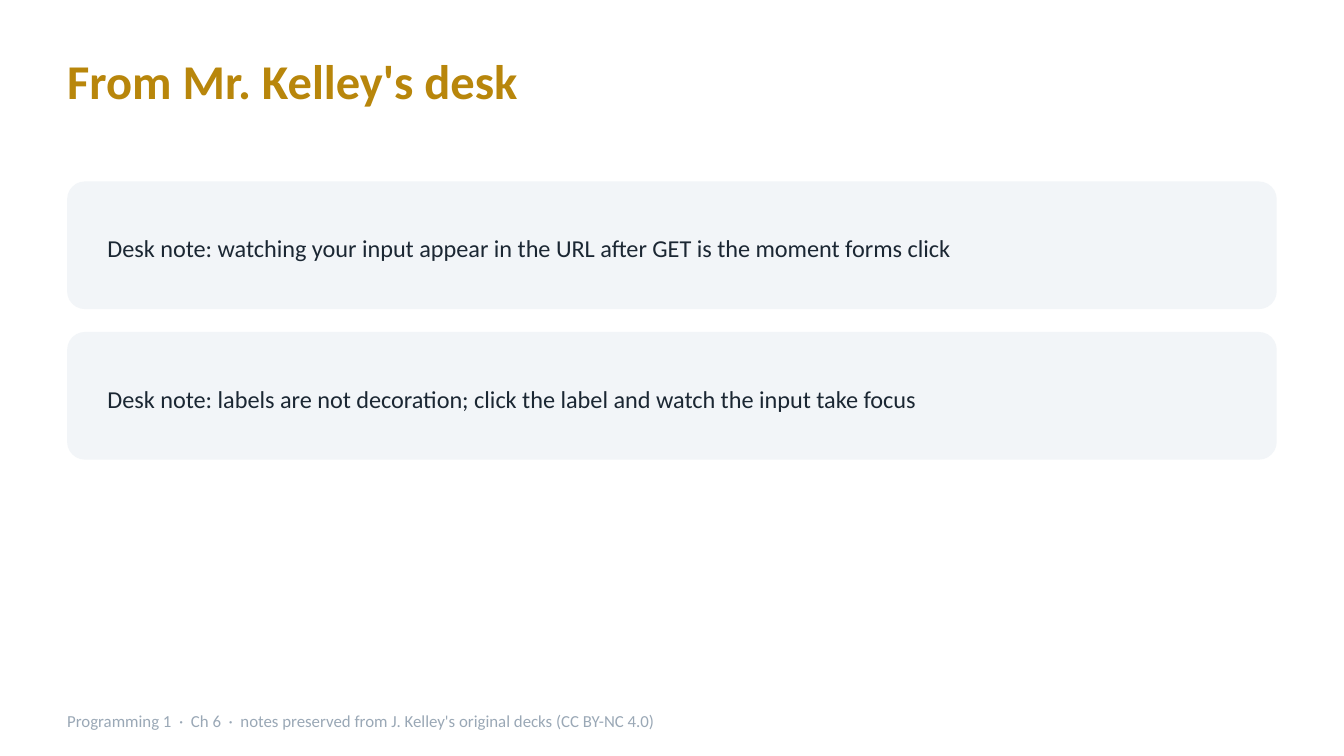
from pptx import Presentation
from pptx.dml.color import RGBColor
from pptx.enum.shapes import MSO_SHAPE as Shape
from pptx.enum.text import MSO_ANCHOR as Anchor, MSO_AUTO_SIZE as AutoSize
from pptx.util import Inches, Pt

COLORS = {"title": "B8860B", "card": "F2F5F8", "body": "1B2733", "footer": "9AA8B6"}
FONT = "Calibri"
SLIDE_WIDTH = 10
SLIDE_HEIGHT = SLIDE_WIDTH * 9 / 16
MARGIN = 0.5
CARD_TOP, CARD_WIDTH, CARD_HEIGHT, CARD_STEP = 1.35, 9, 0.95, 1.12
NOTES = [
    "Desk note: watching your input appear in the URL after GET is the moment forms click",
    "Desk note: labels are not decoration; click the label and watch the input take focus",
]


def set_attributes(target, values):
    for name, value in values.items():
        setattr(target, name, value)


def add_text(slide, text, box, size, color, bold=False, anchor=Anchor.TOP):
    shape = slide.shapes.add_textbox(*map(Inches, box))
    frame = shape.text_frame
    set_attributes(frame, {
        "margin_left": 0, "margin_top": 0, "margin_right": 0, "margin_bottom": 0,
        "word_wrap": True, "auto_size": AutoSize.SHAPE_TO_FIT_TEXT,
        "vertical_anchor": anchor,
    })
    paragraph = frame.paragraphs[0]
    paragraph.space_after = Pt(4)
    run = paragraph.add_run()
    run.text = text
    set_attributes(run.font, {"name": FONT, "size": Pt(size), "bold": bold})
    run.font.color.rgb = RGBColor.from_string(COLORS[color])


def add_note_card(slide, text, top):
    card = slide.shapes.add_shape(
        Shape.ROUNDED_RECTANGLE,
        *map(Inches, (MARGIN, top, CARD_WIDTH, CARD_HEIGHT)))
    card.adjustments[0] = 0.14
    card.shadow.inherit = False
    card.fill.solid()
    card.fill.fore_color.rgb = RGBColor.from_string(COLORS["card"])
    card.line.fill.background()
    add_text(slide, text, (MARGIN + 0.3, top + 0.12, CARD_WIDTH - 0.6, 0.75),
             13, "body", anchor=Anchor.MIDDLE)


def main():
    presentation = Presentation()
    set_attributes(presentation, {"slide_width": Inches(SLIDE_WIDTH),
                                  "slide_height": Inches(SLIDE_HEIGHT)})
    slide = presentation.slides.add_slide(presentation.slide_layouts[6])

    add_text(slide, "From Mr. Kelley's desk", (MARGIN, 0.38, 9, 0.6), 26, "title", bold=True)
    for index, note in enumerate(NOTES):
        add_note_card(slide, note, CARD_TOP + index * CARD_STEP)
    add_text(slide,
             "Programming 1  ·  Ch 6  ·  notes preserved from J. Kelley's original decks (CC BY-NC 4.0)",
             (MARGIN, 5.29, 8, 0.25), 9, "footer")

    presentation.save("out.pptx")


if __name__ == "__main__":
    main()
